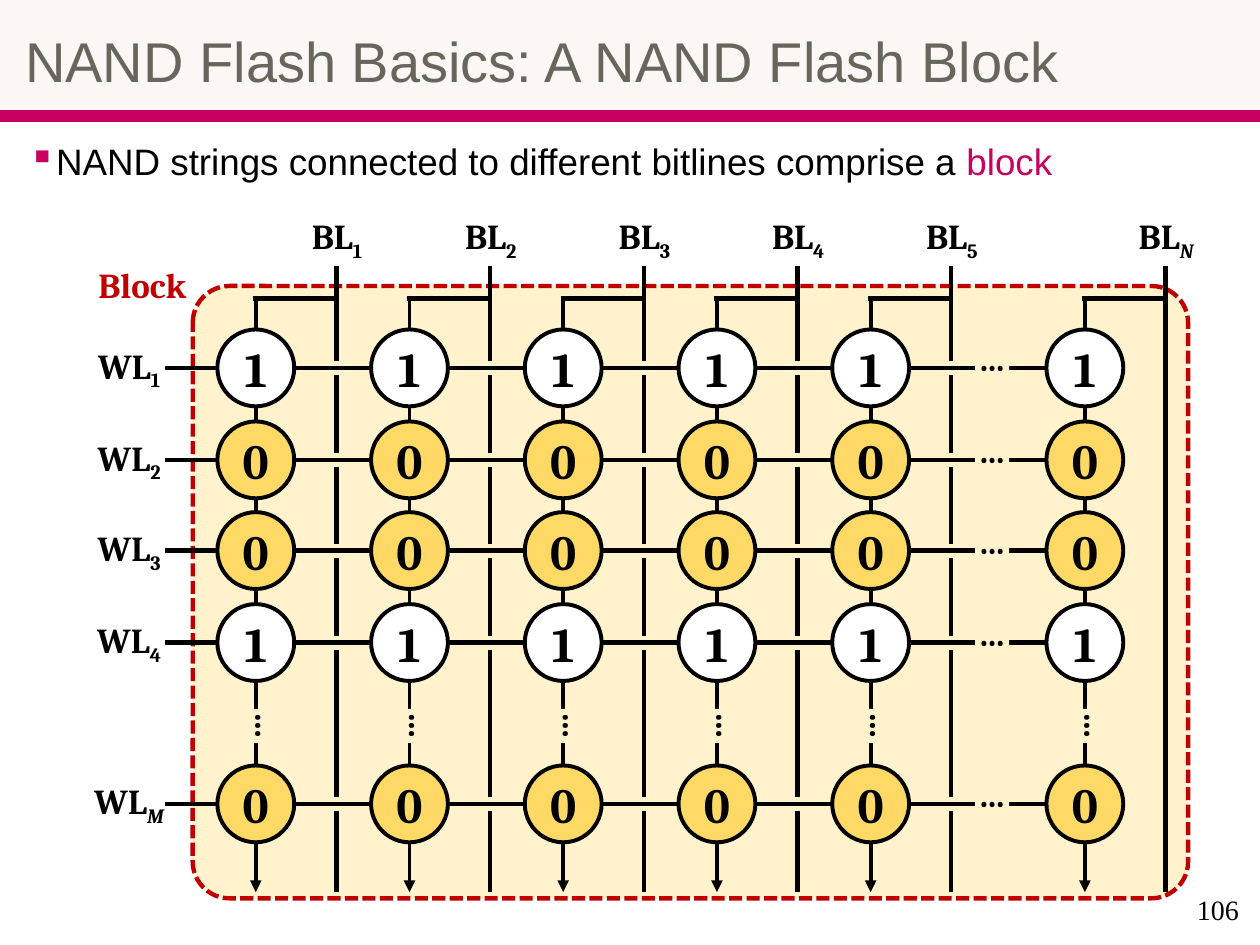
from lxml import etree
from pptx import Presentation
from pptx.dml.color import RGBColor
from pptx.enum.dml import MSO_LINE
from pptx.enum.shapes import MSO_CONNECTOR, MSO_SHAPE
from pptx.enum.text import MSO_ANCHOR, MSO_AUTO_SIZE, PP_ALIGN
from pptx.oxml.ns import qn
from pptx.util import Inches, Pt

STRAIGHT = MSO_CONNECTOR.STRAIGHT
RECT, ROUNDED, OVAL = MSO_SHAPE.RECTANGLE, MSO_SHAPE.ROUNDED_RECTANGLE, MSO_SHAPE.OVAL
LEFT, CENTER, RIGHT = PP_ALIGN.LEFT, PP_ALIGN.CENTER, PP_ALIGN.RIGHT
MIDDLE = MSO_ANCHOR.MIDDLE
DASH = MSO_LINE.SQUARE_DOT
NO_FIT = MSO_AUTO_SIZE.NONE

BLACK = RGBColor(0x00, 0x00, 0x00)
WHITE = RGBColor(0xFF, 0xFF, 0xFF)
MAGENTA = RGBColor(0xC8, 0x00, 0x60)
RED = RGBColor(0xC0, 0x00, 0x00)
CREAM = RGBColor(0xFF, 0xF2, 0xCC)
GOLD = RGBColor(0xFF, 0xD9, 0x66)
TITLE_FILL = RGBColor(0xFA, 0xF7, 0xF5)
TITLE_GRAY = RGBColor(0x66, 0x66, 0x5C)

BITLINES = ["1", "2", "3", "4", "5", "N"]
WORDLINES = [("1", 0.65, "1"), ("2", 1.38, "0"), ("3", 2.1, "0"), ("4", 2.83, "1"), ("M", 4.11, "0")]
STRING_OFFSETS = [0.5 + 1.22 * i for i in range(5)] + [7.08]
CELL_SIZE = 0.61
BITLINE_SHIFT = 0.64


def format_run(run, size, font, color, bold=False):
    """Set the character format of one run."""
    run.font.size = Pt(size)
    run.font.name = font
    run.font.color.rgb = color
    run.font.bold = bold


def set_insets(frame, left=0.0, top=0.0, right=0.0, bottom=0.0):
    """Set the four inner margins of a text frame in inches."""
    frame.margin_left, frame.margin_top = Inches(left), Inches(top)
    frame.margin_right, frame.margin_bottom = Inches(right), Inches(bottom)


def add_panel(slide, kind, box, fill, line=None, line_width=1.0):
    """Add a filled preset shape, outlined if a line colour is given."""
    panel = slide.shapes.add_shape(kind, *map(Inches, box))
    panel.shadow.inherit = False
    panel.fill.solid()
    panel.fill.fore_color.rgb = fill
    if line is None:
        panel.line.fill.background()
    else:
        panel.line.color.rgb = line
        panel.line.width = Pt(line_width)
    return panel


def add_wire(slide, start, end, color=BLACK, width=2.5, arrow=False):
    """Add a straight line, with a triangle at its end if wanted."""
    wire = slide.shapes.add_connector(STRAIGHT, *map(Inches, (*start, *end)))
    wire.line.color.rgb = color
    wire.line.width = Pt(width)
    if arrow:
        etree.SubElement(wire.line._get_or_add_ln(), qn("a:tailEnd"), type="triangle")
    etree.SubElement(wire._element.spPr, qn("a:effectLst"))


def center_text(shape, text, size, color=BLACK):
    """Write one bold, centred line without insets and return its paragraph."""
    frame = shape.text_frame
    frame.word_wrap = True
    frame.vertical_anchor = MIDDLE
    set_insets(frame)
    paragraph = frame.paragraphs[0]
    paragraph.text = text
    paragraph.alignment = CENTER
    format_run(paragraph.runs[0], size, "Cambria", color, True)
    return paragraph


def add_label(slide, box, text, subscript="", color=BLACK):
    """Add a line label with an optional subscript."""
    label = slide.shapes.add_textbox(*map(Inches, box))
    paragraph = center_text(label, text, 20, color)
    if subscript:
        index = paragraph.add_run()
        index.text = subscript
        format_run(index, 20, "Cambria", color, True)
        index.font.italic = subscript.isalpha()
        index.font._element.set("baseline", "-25000")


def add_ellipsis(slide, left, top, rotation=0):
    """Add the dots that stand for omitted cells."""
    dots = add_panel(slide, RECT, (left, top, 0.27, 0.34), CREAM)
    dots.rotation = rotation
    center_text(dots, "…", 20)


def add_title(slide, left, top, width, height):
    """Place the title band with the rule below it."""
    title = slide.shapes.title
    title.left, title.top = Inches(left), Inches(top)
    title.width, title.height = Inches(width), Inches(height)
    title.fill.solid()
    title.fill.fore_color.rgb = TITLE_FILL
    title.line.color.rgb = TITLE_FILL
    title.line.width = Pt(0.75)
    frame = title.text_frame
    frame.text = "NAND Flash Basics: A NAND Flash Block"
    frame.auto_size = NO_FIT
    frame.vertical_anchor = MIDDLE
    set_insets(frame, 0.2, 0.2, 0.1, 0.05)
    paragraph = frame.paragraphs[0]
    paragraph.alignment = LEFT
    paragraph.line_spacing = 0.9
    format_run(paragraph.runs[0], 32, "Arial", TITLE_GRAY)
    add_panel(slide, RECT, (left, top + height + 0.01, width, 0.08), MAGENTA, MAGENTA)


def add_statement(slide, left, top, width, height):
    """Place the bulleted statement."""
    statement = slide.shapes.add_textbox(*map(Inches, (left, top, width, height)))
    statement.text_frame.word_wrap = True
    paragraph = statement.text_frame.paragraphs[0]
    paragraph.line_spacing = 0.9
    properties = paragraph._p.get_or_add_pPr()
    properties.set("marL", str(Inches(0.19)))
    properties.set("indent", str(-Inches(0.19)))
    bullet_color = etree.SubElement(properties, qn("a:buClr"))
    etree.SubElement(bullet_color, qn("a:srgbClr"), val=str(MAGENTA))
    etree.SubElement(properties, qn("a:buChar"), char="▪")
    parts = [("NAND strings connected to different bitlines comprise a ", BLACK), ("block", MAGENTA)]
    for text, color in parts:
        run = paragraph.add_run()
        run.text = text
        format_run(run, 21, "Arial", color)


def add_string_wires(slide, x, top, subscript):
    """Draw one NAND string, its bitline and the bitline label."""
    bitline = x + BITLINE_SHIFT
    add_wire(slide, (x, top + 0.09), (x, top + 4.81), width=2.25, arrow=True)
    add_wire(slide, (bitline, top + 4.81), (bitline, top - 0.16))
    add_wire(slide, (x - 0.02, top + 0.1), (bitline, top + 0.1))
    add_label(slide, (bitline - 0.29, top - 0.55, 0.59, 0.34), "BL", subscript)


def add_wordline(slide, left, y, subscript):
    """Draw one wordline with its label, breaking the bitlines it crosses."""
    end = left + 6.77
    add_wire(slide, (left + 0.2, y), (end, y), CREAM, 8)
    add_wire(slide, (left - 0.22, y), (end, y))
    add_ellipsis(slide, left + 6.21, y - 0.25)
    add_label(slide, (left - 0.8, y - 0.17, 0.59, 0.34), "WL", subscript)


def add_cells(slide, x, top):
    """Place the cells of one string and the dots before the last one."""
    for _, offset, bit in WORDLINES:
        box = (x - CELL_SIZE / 2, top + offset - CELL_SIZE / 2, CELL_SIZE, CELL_SIZE)
        cell = add_panel(slide, OVAL, box, WHITE if bit == "1" else GOLD, BLACK, 2.25)
        center_text(cell, bit, 28)
    add_ellipsis(slide, x - 0.21, top + 3.32, 270)


def add_block(slide, left, top, width, height):
    """Draw the flash block inside its dashed frame."""
    frame = add_panel(slide, ROUNDED, (left, top, width, height), CREAM, RED, 2.5)
    frame.adjustments[0] = 0.06
    frame.line.dash_style = DASH
    add_label(slide, (left - 0.83, top - 0.19, 0.86, 0.35), "Block", color=RED)
    for offset, subscript in zip(STRING_OFFSETS, BITLINES):
        add_string_wires(slide, left + offset, top, subscript)
    for subscript, offset, _ in WORDLINES:
        add_wordline(slide, left, top + offset, subscript)
    for offset in STRING_OFFSETS:
        add_cells(slide, left + offset, top)


def add_page_number(slide, left, top, width, height):
    """Place the page number."""
    number = slide.shapes.add_textbox(*map(Inches, (left, top, width, height)))
    frame = number.text_frame
    frame.text = "106"
    frame.word_wrap = True
    frame.vertical_anchor = MIDDLE
    frame.paragraphs[0].alignment = RIGHT
    format_run(frame.paragraphs[0].runs[0], 16, "Times New Roman", BLACK)


def main():
    """Build and save the slide."""
    deck = Presentation()
    deck.slide_width, deck.slide_height = Inches(10), Inches(7.5)
    slide = deck.slides.add_slide(deck.slide_layouts[5])
    add_title(slide, 0, 0, 10, 0.87)
    add_statement(slide, 0.13, 1.09, 9.74, 0.5)
    add_block(slide, 1.53, 2.27, 7.9, 4.86)
    add_page_number(slide, 7.6, 6.97, 2.33, 0.5)
    deck.save("out.pptx")


if __name__ == "__main__":
    main()
